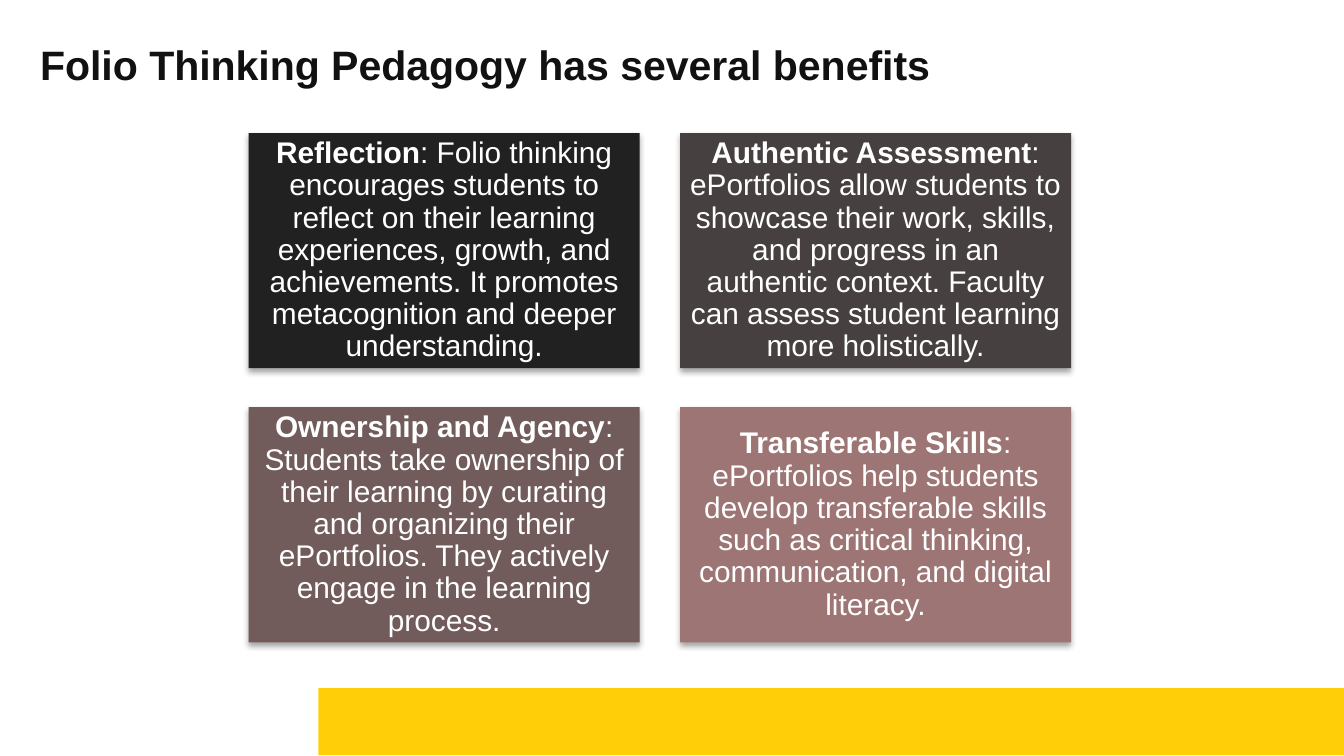
from lxml import etree
from pptx import Presentation
from pptx.dml.color import RGBColor
from pptx.enum.shapes import MSO_SHAPE as Shape
from pptx.enum.text import MSO_ANCHOR as Anchor, PP_ALIGN as Align
from pptx.oxml.ns import qn
from pptx.util import Inches, Pt

WHITE = RGBColor(0xFF, 0xFF, 0xFF)
INK = RGBColor(0x11, 0x11, 0x11)
YELLOW = RGBColor(0xFF, 0xCE, 0x09)
BLACK = RGBColor(0x21, 0x21, 0x21)
CHARCOAL = RGBColor(0x46, 0x40, 0x40)
UMBER = RGBColor(0x71, 0x5B, 0x5B)
ROSE = RGBColor(0x9D, 0x75, 0x75)

BENEFITS = [
    ("Reflection", ": Folio thinking encourages students to reflect on their learning "
     "experiences, growth, and achievements. It promotes metacognition and deeper "
     "understanding.", BLACK),
    ("Authentic Assessment", ": ePortfolios allow students to showcase their work, skills, "
     "and progress in an authentic context. Faculty can assess student learning more "
     "holistically.", CHARCOAL),
    ("Ownership and Agency", ": Students take ownership of their learning by curating and "
     "organizing their ePortfolios. They actively engage in the learning process.", UMBER),
    ("Transferable Skills", ": ePortfolios help students develop transferable skills such "
     "as critical thinking, communication, and digital literacy.", ROSE),
]


class BenefitsSlide:
    """Draws the title, the colour bar and the benefit cards on one slide."""

    font_name = "Arial"

    def __init__(self, slide):
        self.shapes = slide.shapes

    def style(self, paragraph, size, color):
        paragraph.font.name = self.font_name
        paragraph.font.size = Pt(size)
        paragraph.font.color.rgb = color

    def inset(self, frame, margin):
        frame.word_wrap = True
        frame.margin_left = frame.margin_right = Inches(margin)
        frame.margin_top = frame.margin_bottom = Inches(margin)

    def title(self, text, left, top, width, height):
        frame = self.shapes.add_textbox(
            Inches(left), Inches(top), Inches(width), Inches(height)).text_frame
        self.inset(frame, 0.1)
        heading = frame.paragraphs[0]
        heading.text = text
        self.style(heading, 22, INK)
        heading.font.bold = True

    def block(self, color, left, top, width, height):
        block = self.shapes.add_shape(
            Shape.RECTANGLE, Inches(left), Inches(top), Inches(width), Inches(height))
        block.fill.solid()
        block.fill.fore_color.rgb = color
        block.line.fill.background()
        block.shadow.inherit = False
        return block

    def drop_shadow(self, block):
        effects = block._element.spPr.find(qn("a:effectLst"))
        shadow = etree.SubElement(
            effects, qn("a:outerShdw"), blurRad=str(Pt(3.1)), dist=str(Pt(1.8)),
            dir="5400000", algn="ctr", rotWithShape="0")
        black = etree.SubElement(shadow, qn("a:srgbClr"), val="000000")
        etree.SubElement(black, qn("a:alpha"), val="35000")

    def card(self, name, detail, color, left, top, width, height):
        card = self.block(color, left, top, width, height)
        self.drop_shadow(card)
        frame = card.text_frame
        self.inset(frame, 0.07)
        frame.vertical_anchor = Anchor.MIDDLE
        benefit = frame.paragraphs[0]
        benefit.alignment = Align.CENTER
        benefit.line_spacing = 0.9
        self.style(benefit, 16, WHITE)
        lead = benefit.add_run()
        lead.text = name
        lead.font.bold = True
        benefit.add_run().text = detail


def main():
    deck = Presentation()
    deck.slide_width = Inches(10)
    deck.slide_height = Inches(10 * 9 / 16)
    page = BenefitsSlide(deck.slides.add_slide(deck.slide_layouts[6]))
    page.block(YELLOW, 2.37, 5.12, 7.63, 0.5)
    page.title("Folio Thinking Pedagogy has several benefits", 0.2, 0.19, 9.32, 0.57)

    for index, (name, detail, color) in enumerate(BENEFITS):
        row, column = divmod(index, 2)
        page.card(name, detail, color, 1.85 + 3.21 * column, 0.99 + 2.04 * row, 2.91, 1.75)
    deck.save("out.pptx")


if __name__ == "__main__":
    main()
